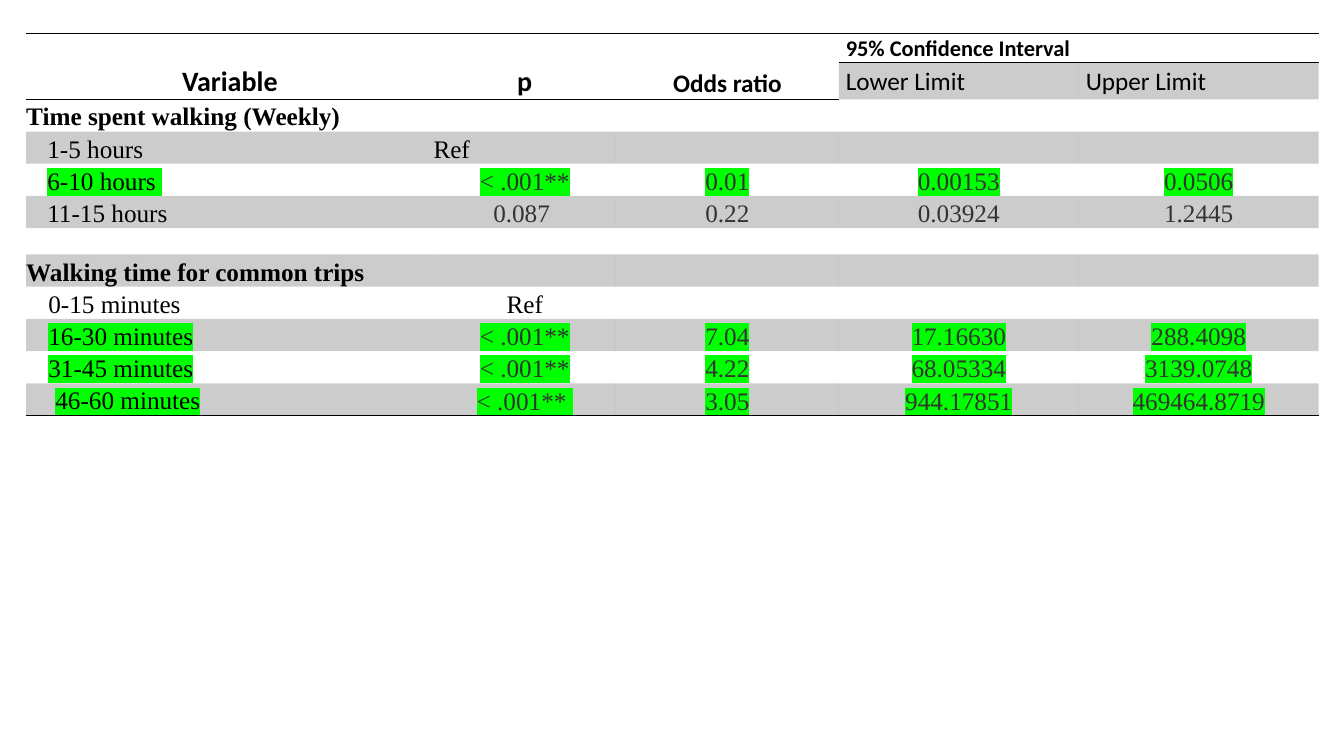
"""Build a slide with an odds-ratio table for walking time."""
from dataclasses import dataclass

from lxml import etree
from pptx import Presentation
from pptx.dml.color import RGBColor
from pptx.enum.text import MSO_ANCHOR, PP_ALIGN
from pptx.oxml.ns import qn
from pptx.table import Table, _Cell
from pptx.util import Inches, Pt

LEFT, CENTER = PP_ALIGN.LEFT, PP_ALIGN.CENTER
TOP, MIDDLE, BOTTOM = MSO_ANCHOR.TOP, MSO_ANCHOR.MIDDLE, MSO_ANCHOR.BOTTOM
BLACK, GRAY, GREEN = "000000", "333333", "00FF00"
SHADE_ALPHA = "20000"
NO_STYLE = "{2D5ABB26-0587-4C30-8999-92F81FD0307C}"
COLUMN_WIDTHS = (4.04, 1.81, 2.21, 2.38, 2.38)
ROW_HEIGHTS = (0.29, 0.36) + (0.32,) * 4 + (0.26,) + (0.32,) * 5
VALUE_ANCHORS = (BOTTOM, MIDDLE, BOTTOM, BOTTOM)
PADDING = 0.07


@dataclass(frozen=True)
class Style:
    size: int = 18
    font: str = "Times New Roman"
    color: str = BLACK
    bold: bool = False
    align: PP_ALIGN = LEFT
    anchor: MSO_ANCHOR = TOP
    padding: float = 0
    indent: float = 0
    spacing: float = 1.15
    highlight: bool = False


@dataclass(frozen=True)
class HeaderCell:
    row: int
    column: int
    text: str
    size: int
    align: PP_ALIGN = LEFT
    anchor: MSO_ANCHOR = TOP
    bold: bool = True


@dataclass(frozen=True)
class DataRow:
    label: str = ""
    values: tuple[str, ...] = ()
    indent: float = 0
    highlight: bool = False
    bold: bool = False
    padding: float = 0
    align: PP_ALIGN = CENTER


HEADERS = (
    HeaderCell(0, 0, "Variable", 20, CENTER, BOTTOM),
    HeaderCell(0, 1, "p", 20, CENTER, BOTTOM),
    HeaderCell(0, 2, "Odds ratio", 18, CENTER, BOTTOM),
    HeaderCell(0, 3, "95% Confidence Interval", 16),
    HeaderCell(1, 3, "Lower Limit", 18, anchor=MIDDLE, bold=False),
    HeaderCell(1, 4, "Upper Limit", 18, anchor=MIDDLE, bold=False),
)
DATA_ROWS = (
    DataRow("Time spent walking (Weekly)", bold=True),
    DataRow("1-5 hours", ("Ref",), 0.21, align=LEFT),
    DataRow("6-10 hours ", ("< .001**", "0.01", "0.00153", "0.0506"), 0.21, True),
    DataRow("11-15 hours", ("0.087 ", "0.22", "0.03924", "1.2445"), 0.21),
    DataRow(),
    DataRow("Walking time for common trips", bold=True),
    DataRow("0-15 minutes", ("Ref",), 0.22),
    DataRow("16-30 minutes", ("< .001**", "7.04", "17.16630", "288.4098"), 0.22, True),
    DataRow("31-45 minutes", ("< .001**", "4.22", "68.05334", "3139.0748"), 0.22, True),
    DataRow("46-60 minutes", ("< .001** ", "3.05", "944.17851", "469464.8719"), 0.22, True,
            padding=PADDING),
)


def rgb(color: str) -> RGBColor:
    return RGBColor.from_string(color)


def add_color(parent: etree._Element, color: str) -> None:
    etree.SubElement(parent, qn("a:srgbClr"), val=color)


def write_cell(cell: _Cell, text: str, style: Style) -> None:
    cell.vertical_anchor = style.anchor
    cell.margin_left = cell.margin_right = Inches(style.padding)
    cell.text_frame.text = text
    para = cell.text_frame.paragraphs[0]
    para.alignment = style.align
    para.line_spacing = style.spacing
    para.space_after = Pt(8)
    if style.indent:
        properties = para._p.get_or_add_pPr()
        properties.set("marL", str(Inches(style.indent)))
        properties.set("indent", "0")
    for span in para.runs:
        span.font.size = Pt(style.size)
        span.font.name = style.font
        span.font.bold = style.bold
        span.font.color.rgb = rgb(style.color)
        if style.highlight:
            mark = etree.Element(qn("a:highlight"))
            add_color(mark, GREEN)
            span._r.rPr.find(qn("a:solidFill")).addnext(mark)


def prepare_cell(cell: _Cell, shaded: bool) -> None:
    cell.margin_left = cell.margin_right = cell.margin_top = cell.margin_bottom = 0
    etree.SubElement(cell.text_frame.paragraphs[0]._p, qn("a:endParaRPr"), sz="1000")
    if not shaded:
        cell.fill.background()
        return
    cell.fill.solid()
    cell.fill.fore_color.rgb = rgb(BLACK)
    tint = cell._tc.tcPr.find(qn("a:solidFill"))[0]
    etree.SubElement(tint, qn("a:alpha"), val=SHADE_ALPHA)


def add_border(cell: _Cell, side: str) -> None:
    line = etree.Element(qn(f"a:{side}"), w=str(Pt(1)))
    add_color(etree.SubElement(line, qn("a:solidFill")), BLACK)
    cell._tc.get_or_add_tcPr().insert(0, line)


def write_header(table: Table) -> None:
    for column in range(3):
        table.cell(0, column).merge(table.cell(1, column))
    table.cell(0, 3).merge(table.cell(0, 4))
    for header in HEADERS:
        style = Style(header.size, "Calibri", bold=header.bold, align=header.align,
                      anchor=header.anchor, padding=PADDING, spacing=1.07)
        write_cell(table.cell(header.row, header.column), header.text, style)


def write_data_row(table: Table, index: int, row: DataRow) -> None:
    if row.label:
        label_style = Style(bold=row.bold, padding=row.padding, indent=row.indent,
                            highlight=row.highlight)
        write_cell(table.cell(index, 0), row.label, label_style)
    for column, (text, anchor) in enumerate(zip(row.values, VALUE_ANCHORS), start=1):
        value_style = Style(color=BLACK if text == "Ref" else GRAY, align=row.align,
                            anchor=anchor, padding=row.padding, highlight=row.highlight)
        write_cell(table.cell(index, column), text, value_style)


def draw_borders(table: Table) -> None:
    for column in range(len(COLUMN_WIDTHS)):
        add_border(table.cell(0, column), "lnB")
        add_border(table.cell(0, column), "lnT")
        add_border(table.cell(len(ROW_HEIGHTS) - 1, column), "lnB")
        if column < 3:
            add_border(table.cell(1, column), "lnB")


def main() -> None:
    deck = Presentation()
    deck.slide_width, deck.slide_height = Inches(13.33), Inches(7.5)
    page = deck.slides.add_slide(deck.slide_layouts[6])
    frame = page.shapes.add_table(
        len(ROW_HEIGHTS), len(COLUMN_WIDTHS), Inches(0.26), Inches(0.33),
        Inches(sum(COLUMN_WIDTHS)), Inches(sum(ROW_HEIGHTS)))
    table = frame.table
    table.first_row = table.horz_banding = False
    table._tbl.tblPr.find(qn("a:tableStyleId")).text = NO_STYLE
    for column, width in zip(table.columns, COLUMN_WIDTHS):
        column.width = Inches(width)
    for index, height in enumerate(ROW_HEIGHTS):
        table.rows[index].height = Inches(height)
        for column in range(len(COLUMN_WIDTHS)):
            shaded = index % 2 == 1 and (index > 1 or column >= 3)
            prepare_cell(table.cell(index, column), shaded)
    write_header(table)
    for index, row in enumerate(DATA_ROWS, start=2):
        write_data_row(table, index, row)
    draw_borders(table)
    deck.save("out.pptx")


if __name__ == "__main__":
    main()
